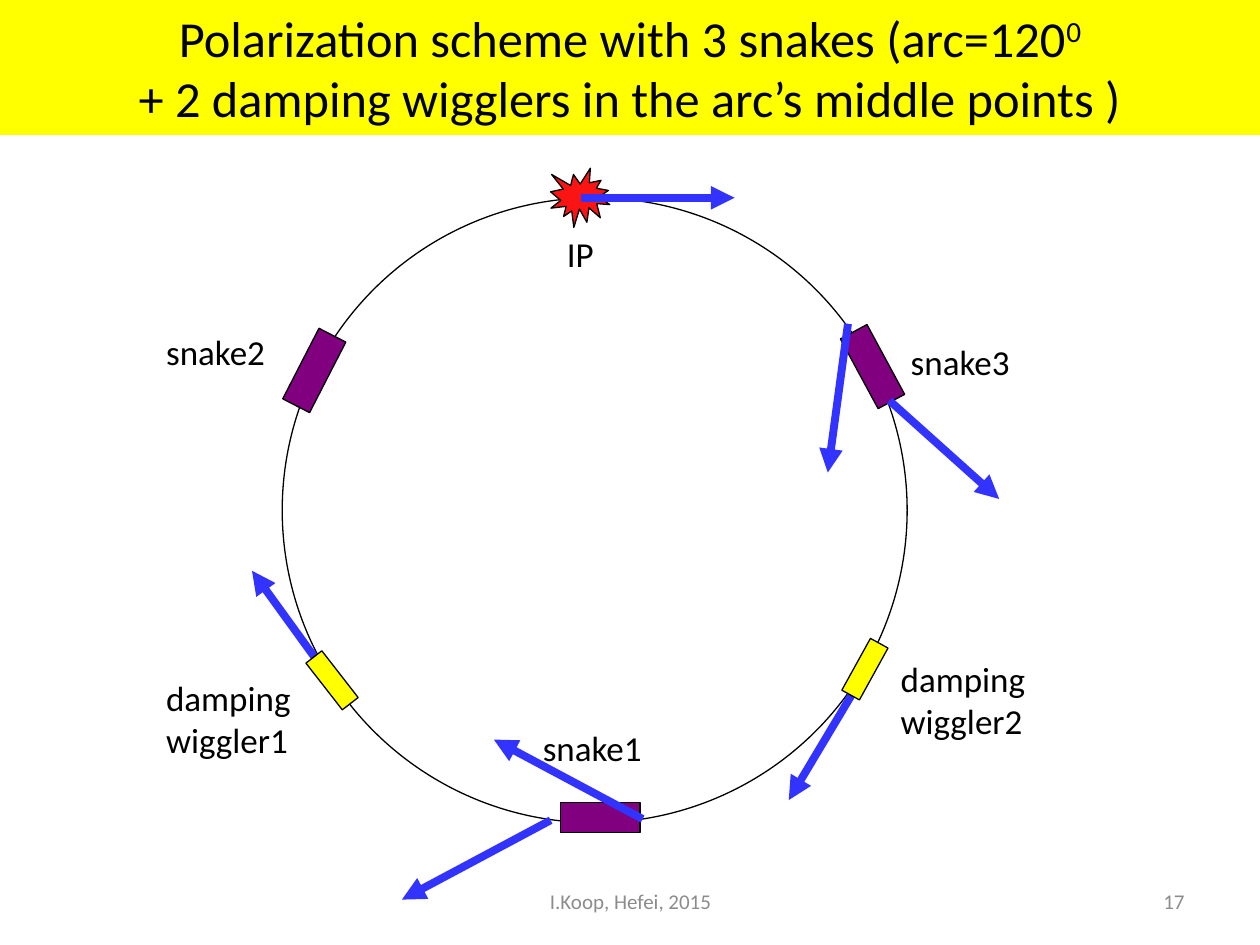
from lxml.etree import SubElement
from pptx import Presentation
from pptx.dml.color import RGBColor
from pptx.enum.shapes import MSO_CONNECTOR, MSO_SHAPE
from pptx.enum.text import MSO_ANCHOR, MSO_AUTO_SIZE, PP_ALIGN
from pptx.oxml.ns import qn
from pptx.util import Inches, Pt

COLORS = {"banner": "FFFF00", "text": "000000", "footer": "8C8C8C", "outline": "000000",
          "ring": "FFFFFF", "ip": "FA1414", "snake": "800080", "wiggler": "FFFF00",
          "spin": "3333FF"}
FONT = "Calibri"
# The slide is a grid of 100 columns by 75 rows; all lengths are in its cells
COLUMNS, ROWS = 100, 75
CELL = Inches(10) / COLUMNS


def cells(*lengths):
    return [round(length * CELL) for length in lengths]


def rgb(name):
    return RGBColor.from_string(COLORS[name])


def style_paragraph(paragraph, size, color, align):
    paragraph.alignment = align
    paragraph.font.name = FONT
    paragraph.font.size = Pt(size)
    paragraph.font.color.rgb = rgb(color)


def add_text(slide, box, text, size=20, color="text", align=PP_ALIGN.LEFT,
             anchor=MSO_ANCHOR.TOP, wrap=False):
    frame = slide.shapes.add_textbox(*cells(*box)).text_frame
    frame.word_wrap = wrap
    frame.vertical_anchor = anchor
    frame.text = text
    for paragraph in frame.paragraphs:
        style_paragraph(paragraph, size, color, align)


def add_part(slide, kind, center, size, color, angle=0):
    (x, y), (width, height) = center, size
    part = slide.shapes.add_shape(
        kind, *cells(x - width / 2, y - height / 2, width, height))
    part.rotation = angle
    part.shadow.inherit = False
    part.fill.solid()
    part.fill.fore_color.rgb = rgb(color)
    part.line.color.rgb = rgb("outline")
    part.line.width = Pt(0.75)


def add_spin_arrow(slide, start, end):
    arrow = slide.shapes.add_connector(MSO_CONNECTOR.STRAIGHT, *cells(*start, *end))
    arrow.line.color.rgb = rgb("spin")
    arrow.line.width = Pt(4.5)
    SubElement(arrow.line._get_or_add_ln(), qn("a:tailEnd"), type="triangle")
    SubElement(arrow._element.spPr, qn("a:effectLst"))


def fill_title(slide, box):
    title = slide.shapes.title
    title.left, title.top, title.width, title.height = cells(*box)
    title.fill.solid()
    title.fill.fore_color.rgb = rgb("banner")
    frame = title.text_frame
    frame.auto_size = MSO_AUTO_SIZE.NONE
    frame.vertical_anchor = MSO_ANCHOR.MIDDLE
    heading = frame.paragraphs[0]
    style_paragraph(heading, 28.8, "text", PP_ALIGN.CENTER)
    heading.add_run().text = "Polarization scheme with 3 snakes (arc=120"
    degree = heading.add_run()
    degree.text = "0"
    degree.font._element.set("baseline", "30000")
    heading.add_line_break()
    heading.add_run().text = "+ 2 damping wigglers in the arc’s middle points )"


def draw_ring(slide, box):
    left, top, width, height = box

    def at(x, y):
        return left + x, top + y

    # Storage ring and interaction point
    add_part(slide, MSO_SHAPE.OVAL, at(width / 2, height / 2), (width, height), "ring")
    add_part(slide, MSO_SHAPE.EXPLOSION1, at(23.65, 0), (4.7, 4.7), "ip")

    # Snakes
    for x, y, angle in [(25.25, 49.2, 0), (2.55, 13.7, 297.2), (46.85, 13.4, 61.6)]:
        add_part(slide, MSO_SHAPE.RECTANGLE, at(x, y), (6.3, 2.4), "snake", angle)

    # Spin directions around the ring
    for start, end in [((23.7, 0), (35.9, 0)),
                       ((44.9, 10), (43.3, 21.8)),
                       ((48.2, 16.1), (56.9, 23.9)),
                       ((46.9, 36.6), (40.2, 47.8)),
                       ((28.6, 49.3), (16.8, 43)),
                       ((21.3, 49.4), (9.5, 55.7)),
                       ((4.4, 39), (-2.4, 29.6))]:
        add_spin_arrow(slide, at(*start), at(*end))

    # Damping wigglers
    for x, y, angle in [(3.95, 38.3, 52.1), (46.25, 37.4, 298.9)]:
        add_part(slide, MSO_SHAPE.RECTANGLE, at(x, y), (4.7, 1.6), "wiggler", angle)

    # Labels
    for label, x, y, size in [("IP", 21.6, 2.3, (4.6, 4.3)),
                              ("snake1", 19.7, 41.5, (11, 4.3)),
                              ("snake2", -10.2, 10, (11, 4.3)),
                              ("snake3", 48.9, 10.8, (11, 4.3)),
                              ("damping\nwiggler1", -10.2, 37.5, (12.7, 7.7)),
                              ("damping\nwiggler2", 48.1, 36, (12.7, 7.7))]:
        add_text(slide, (*at(x, y), *size), label)


def add_footer(slide, box):
    left, top, width, height = box
    for text, x, share, align in [
            ("I.Koop, Hefei, 2015", 34.2, 31.7, PP_ALIGN.CENTER),
            ("17", width - 23.3, 23.3, PP_ALIGN.RIGHT)]:
        add_text(slide, (left + x, top, share, height), text, 12, "footer", align,
                 MSO_ANCHOR.MIDDLE, wrap=True)


def main():
    prs = Presentation()
    prs.slide_width, prs.slide_height = cells(COLUMNS, ROWS)
    slide = prs.slides.add_slide(prs.slide_layouts[5])
    fill_title(slide, (0, 0, COLUMNS, 10.7))
    draw_ring(slide, (22.4, 15.7, 49.6, 49.6))
    add_footer(slide, (0, 69.5, 95, 4))
    prs.save("out.pptx")


if __name__ == "__main__":
    main()
